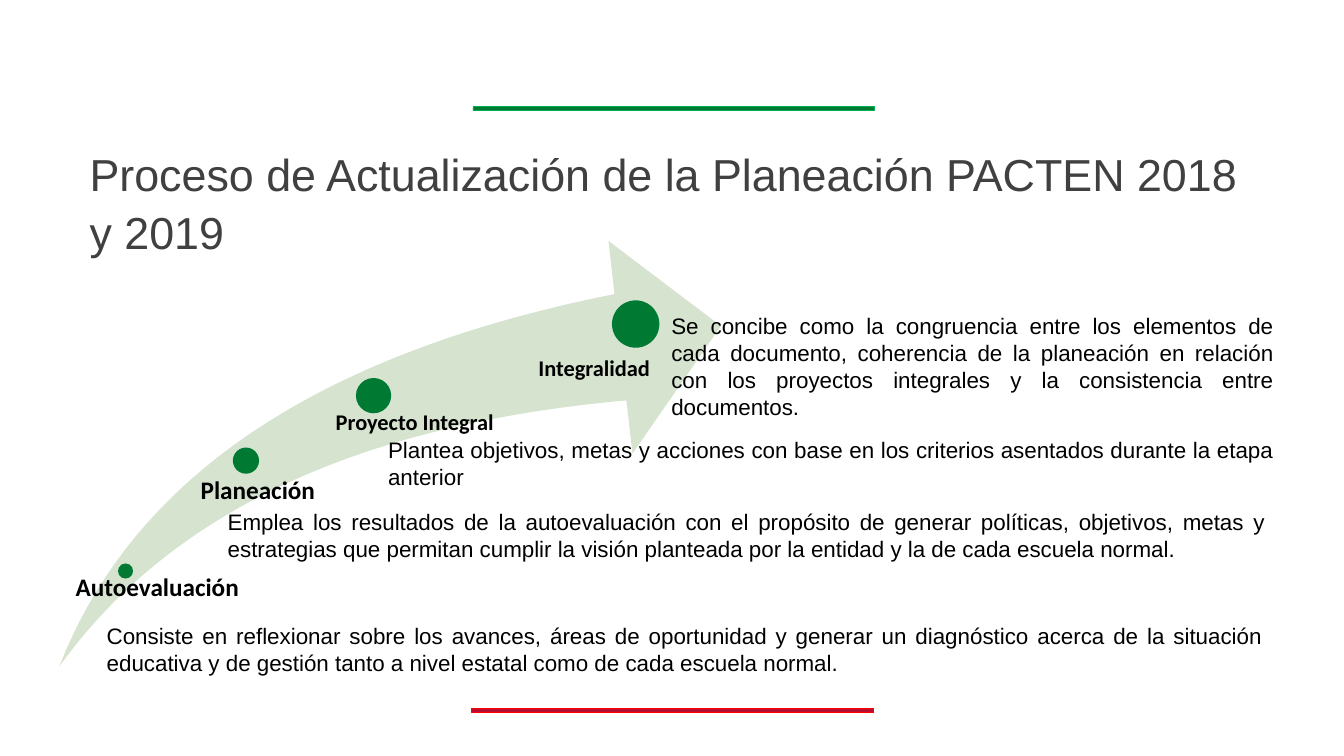
"""Build the slide on the PACTEN planning update process."""
from dataclasses import dataclass

from pptx import Presentation
from pptx.dml.color import RGBColor
from pptx.enum.shapes import MSO_SHAPE
from pptx.enum.text import MSO_ANCHOR, MSO_AUTO_SIZE, PP_ALIGN
from pptx.util import Emu, Pt

RECT, OVAL, SWOOSH = MSO_SHAPE.RECTANGLE, MSO_SHAPE.OVAL, MSO_SHAPE.SWOOSH_ARROW
TOP = MSO_ANCHOR.TOP
LEFT, JUSTIFY = PP_ALIGN.LEFT, PP_ALIGN.JUSTIFY
GROW, FIXED = MSO_AUTO_SIZE.SHAPE_TO_FIT_TEXT, MSO_AUTO_SIZE.NONE
SCALE = 9144
GREEN, PALE, BLACK, GREY = "007A33", "D5E3CF", "000000", "404040"
Box = tuple[int, int, int, int]


@dataclass
class Bar:
    """A coloured rule at the edge of the page."""
    box: Box
    fill: str
    line: str


@dataclass
class Step:
    """A stage on the arrow: its dot, label and meaning."""
    name: str
    dot: Box
    label: Box
    inset: int
    size: int
    text: str
    body: Box


BARS = [
    Bar((468, 703, 398, 4), "BA0C2F", "FF0000"),
    Bar((469, 106, 398, 4), GREEN, "00B050"),
]
STEPS = [
    Step("Autoevaluación", (117, 559, 15, 15), (67, 570, 261, 66), 8, 18,
         "Consiste en reflexionar sobre los avances, áreas de oportunidad y "
         "generar un diagnóstico acerca de la situación educativa y de gestión "
         "tanto a nivel estatal como de cada escuela normal.",
         (96, 612, 1166, 94)),
    Step("Planeación", (231, 444, 26, 26), (185, 474, 169, 187), 14, 18,
         "Emplea los resultados de la autoevaluación con el propósito de "
         "generar políticas, objetivos, metas y estrategias que permitan "
         "cumplir la visión planteada por la entidad y la de cada escuela "
         "normal.",
         (216, 499, 1049, 91)),
    Step("Proyecto Integral", (353, 375, 35, 35), (315, 408, 192, 253), 18, 16,
         "Plantea objetivos, metas y acciones con base en los criterios "
         "asentados durante la etapa anterior",
         (375, 428, 898, 64)),
    Step("Integralidad", (607, 298, 47, 47), (509, 354, 185, 274), 25, 16,
         "Se concibe como la congruencia entre los elementos de cada "
         "documento, coherencia de la planeación en relación con los "
         "proyectos integrales y la consistencia entre documentos.",
         (656, 305, 617, 118)),
]


def px(num: int) -> Emu:
    """Turn px into EMU."""
    return Emu(num * SCALE)


def color(code: str) -> RGBColor:
    """Turn a hex string into a colour."""
    return RGBColor.from_string(code)


def add_form(slide, kind, box: Box, fill: str, line: str = ""):
    """Draw a filled shape, outlined if a line colour is given."""
    form = slide.shapes.add_shape(kind, *map(px, box))
    form.shadow.inherit = False
    form.fill.solid()
    form.fill.fore_color.rgb = color(fill)
    if line:
        form.line.color.rgb = color(line)
        form.line.width = Pt(0.5)
    else:
        form.line.fill.background()
    return form


def add_text(slide, box: Box, text: str, size: int, face: str = "Arial",
             ink: str = BLACK, align=LEFT, fit=GROW):
    """Write one paragraph in a wrapped box and return its frame."""
    frame = slide.shapes.add_textbox(*map(px, box)).text_frame
    frame.word_wrap = True
    frame.auto_size = fit
    frame.vertical_anchor = TOP
    para = frame.paragraphs[0]
    para.text = text
    para.alignment = align
    para.font.size = Pt(size)
    para.font.name = face
    para.font.color.rgb = color(ink)
    return frame


def add_label(slide, step: Step) -> None:
    """Write the bold name of a step below its dot."""
    frame = add_text(slide, step.label, step.name, step.size, "Calibri", fit=FIXED)
    frame.margin_left = px(step.inset)
    frame.margin_top = frame.margin_right = frame.margin_bottom = 0
    para = frame.paragraphs[0]
    para.font.bold = True
    para.line_spacing = 0.9


def main() -> None:
    """Build and save the deck."""
    deck = Presentation()
    deck.slide_width, deck.slide_height = px(1333), px(750)
    slide = deck.slides.add_slide(deck.slide_layouts[6])
    for bar in BARS:
        add_form(slide, RECT, bar.box, bar.fill, bar.line)
    arrow = add_form(slide, SWOOSH, (59, 239, 656, 422), PALE)
    arrow.adjustments[0] = arrow.adjustments[1] = 0.25
    for step in STEPS:
        add_form(slide, OVAL, step.dot, GREEN)
        add_label(slide, step)
    title = add_text(slide, (79, 137, 1183, 125),
                     "Proceso de Actualización de la Planeación PACTEN 2018 y 2019",
                     32, ink=GREY)
    title.paragraphs[0].line_spacing = 1.07
    title.paragraphs[0].space_after = Pt(8)
    for step in STEPS:
        add_text(slide, step.body, step.text, 16, align=JUSTIFY)
    deck.save("out.pptx")


if __name__ == "__main__":
    main()
